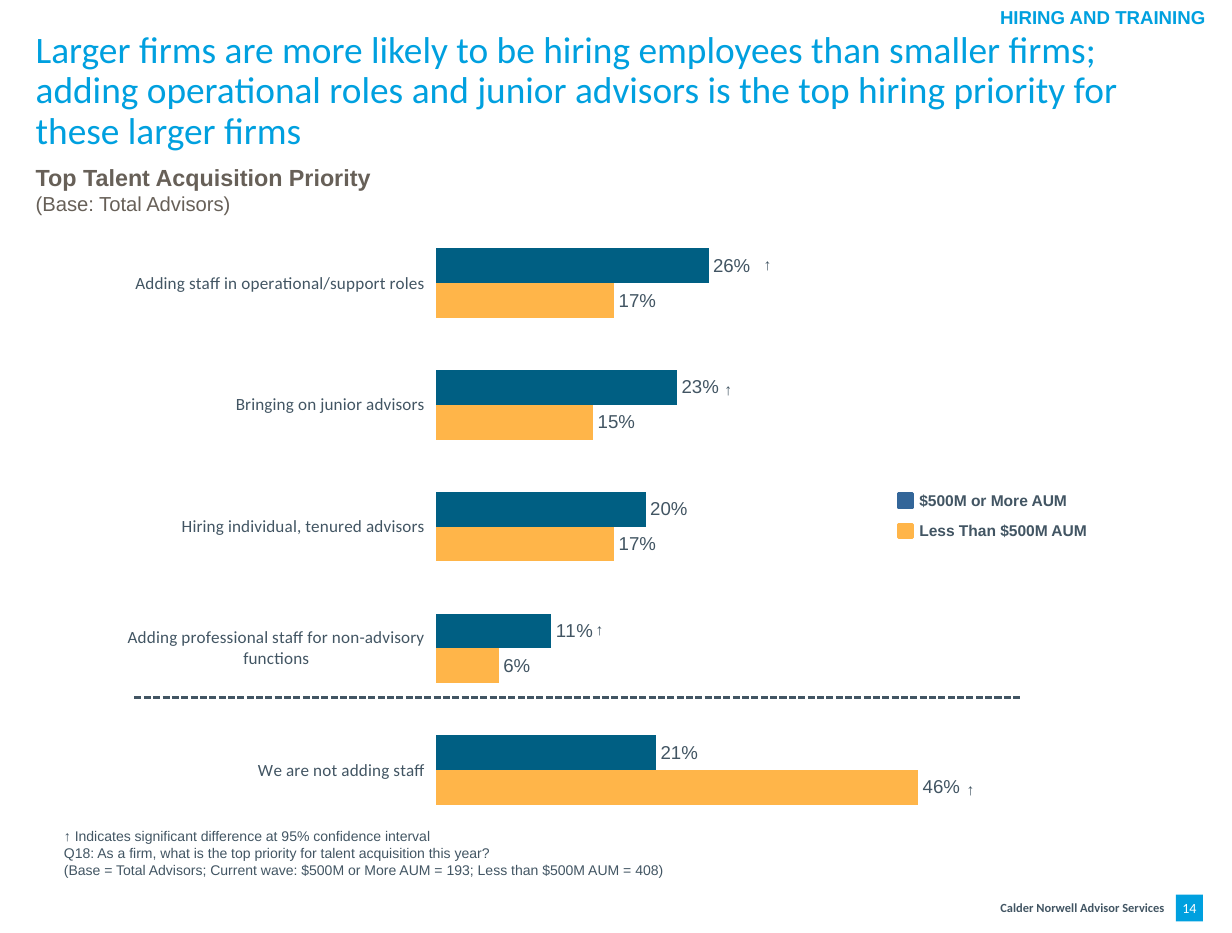
from dataclasses import dataclass

from lxml import etree
from pptx import Presentation
from pptx import util as u
from pptx.chart.data import CategoryChartData
from pptx.dml.color import RGBColor
from pptx.enum import chart as charts, dml, shapes, text
from pptx.oxml import parse_xml
from pptx.oxml.ns import nsdecls, qn


@dataclass(frozen=True)
class Theme:
    """Colours, fonts and type sizes of the slide."""
    slate: str = "425563"
    sky: str = "00A0DF"
    taupe: str = "676058"
    teal: str = "005F83"
    amber: str = "FFB549"
    blue: str = "336699"
    white: str = "FFFFFF"
    body: str = "Arial"
    display: str = "Calibri"
    title: float = 24
    subtitle: float = 15
    base: float = 13
    label: float = 12
    category: float = 11
    legend: float = 10
    note: float = 9
    footer: float = 8


THEME = Theme()
PADDING = (0.28, 0.15, 0.28, 0.15)


def assign(target, values):
    """Set every attribute named in values on target."""
    for name, value in values.items():
        setattr(target, name, value)


def style_font(font, size, color=THEME.slate, name=THEME.body, bold=False):
    """Give a font its size, colour, typeface and weight."""
    assign(font, {"size": u.Pt(size), "name": name, "bold": bold})
    font.color.rgb = RGBColor.from_string(color)


class SlideBuilder:
    """Draws styled elements on the current slide, measured in centimetres."""

    def __init__(self, presentation):
        """Start a blank slide."""
        self.slide = presentation.slides.add_slide(presentation.slide_layouts[6])

    def fill_text(self, shape, lines, style, layout=None, insets=(0, 0, 0, 0), frame=None):
        """Fill a shape with paragraphs, one for each (text, font changes) pair."""
        text_frame = shape.text_frame
        sides = ("margin_left", "margin_top", "margin_right", "margin_bottom")
        assign(text_frame, dict(zip(sides, map(u.Cm, insets))))
        assign(text_frame, {"word_wrap": True, **(frame or {})})
        for index, (line, changes) in enumerate(lines):
            paragraph = text_frame.add_paragraph() if index else text_frame.paragraphs[0]
            assign(paragraph, layout or {})
            run = paragraph.add_run()
            run.text = line
            style_font(run.font, **{**style, **changes})

    def text(self, box, lines, style, **options):
        """Add a text box."""
        shape = self.slide.shapes.add_textbox(*map(u.Cm, box))
        self.fill_text(shape, lines, style, **options)

    def rectangle(self, box, color, border=0):
        """Add a filled rectangle, with a border of the same colour if asked."""
        shape = self.slide.shapes.add_shape(shapes.MSO_SHAPE.RECTANGLE, *map(u.Cm, box))
        shape.shadow.inherit = False
        shape.fill.solid()
        shape.fill.fore_color.rgb = RGBColor.from_string(color)
        if border:
            shape.line.color.rgb = RGBColor.from_string(color)
            shape.line.width = u.Pt(border)
        else:
            shape.line.fill.background()
        return shape

    def dashed_line(self, left, right, top):
        """Add a horizontal dashed rule."""
        line = self.slide.shapes.add_connector(
            shapes.MSO_CONNECTOR.STRAIGHT, u.Cm(left), u.Cm(top), u.Cm(right), u.Cm(top))
        line.line.color.rgb = RGBColor.from_string(THEME.slate)
        assign(line.line, {"width": u.Pt(1.5), "dash_style": dml.MSO_LINE.SQUARE_DOT})
        etree.SubElement(line._element.spPr, qn("a:effectLst"))

    def bar_chart(self, box, categories, series, plot_area):
        """Add a clustered bar chart with percentage labels and a fixed plot area."""
        data = CategoryChartData(number_format="0%")
        data.categories = categories
        for name, values, _ in series:
            data.add_series(name, values)
        chart = self.slide.shapes.add_chart(
            charts.XL_CHART_TYPE.BAR_CLUSTERED, *map(u.Cm, box), data).chart
        assign(chart, {"has_legend": False, "has_title": False})
        style_font(chart.font, THEME.category, name=THEME.display)
        assign(chart.value_axis, {"visible": False, "has_major_gridlines": False,
                                  "minimum_scale": 0, "maximum_scale": 0.7})
        chart.category_axis.format.line.fill.background()
        style_font(chart.category_axis.tick_labels.font, THEME.category, name=THEME.display)
        plot = chart.plots[0]
        assign(plot, {"gap_width": 150, "overlap": 0, "vary_by_categories": False})
        for bars, (_, _, color) in zip(plot.series, series):
            bars.format.fill.solid()
            bars.format.fill.fore_color.rgb = RGBColor.from_string(color)
            labels = bars.data_labels
            assign(labels, {"show_value": True, "number_format": "0%",
                            "number_format_is_linked": False,
                            "position": charts.XL_LABEL_POSITION.OUTSIDE_END})
            style_font(labels.font, THEME.label)
        values = "".join(f'<c:{tag} val="{value}"/>' for tag, value in zip("xywh", plot_area))
        layout = parse_xml(
            f'<c:layout {nsdecls("c")}><c:manualLayout><c:layoutTarget val="inner"/>'
            f'<c:xMode val="edge"/><c:yMode val="edge"/>{values}</c:manualLayout></c:layout>')
        area = chart._chartSpace.chart.plotArea
        for old in area.findall(qn("c:layout")):
            area.remove(old)
        area.insert(0, layout)


def main():
    """Build the hiring priorities slide."""
    presentation = Presentation()
    assign(presentation, {"slide_width": u.Cm(27.94), "slide_height": u.Cm(21.16)})
    builder = SlideBuilder(presentation)
    center, right = text.PP_ALIGN.CENTER, text.PP_ALIGN.RIGHT
    tight = {"word_wrap": False, "vertical_anchor": text.MSO_ANCHOR.MIDDLE}

    builder.text((20.65, 20.29, 5.77, 0.61), [("Calder Norwell Advisor Services", {})],
                 {"size": THEME.footer, "name": THEME.display, "bold": True},
                 layout={"alignment": right, "line_spacing": 0.95}, frame=tight)
    page_box = builder.rectangle((26.67, 20.29, 0.61, 0.61), THEME.sky)
    builder.fill_text(page_box, [("14", {})],
                      {"size": THEME.note, "name": THEME.display, "color": THEME.white},
                      layout={"alignment": center}, frame=tight)

    builder.text((0.81, 0.71, 26.14, 2.77),
                 [("Larger firms are more likely to be hiring employees than smaller firms; "
                   "adding operational roles and junior advisors is the top hiring priority "
                   "for these larger firms", {})],
                 {"size": THEME.title, "name": THEME.display, "color": THEME.sky},
                 layout={"line_spacing": 0.9})
    builder.text((0.81, 3.71, 19.23, 1.37),
                 [("Top Talent Acquisition Priority", {"bold": True}),
                  ("(Base: Total Advisors)", {"size": THEME.base})],
                 {"size": THEME.subtitle, "color": THEME.taupe}, insets=(0, 0, 0.28, 0.15))
    builder.text((1.17, 18.62, 24.46, 1.45),
                 [("↑ Indicates significant difference at 95% confidence interval", {}),
                  ("Q18: As a firm, what is the top priority for talent acquisition this year?", {}),
                  ("(Base = Total Advisors; Current wave: $500M or More AUM = 193; "
                   "Less than $500M AUM = 408)", {})],
                 {"size": THEME.note}, insets=PADDING)

    builder.bar_chart(
        (1.8, 4.65, 26.01, 14.58),
        ["We are not adding staff", "Adding professional staff for non-advisory functions",
         "Hiring individual, tenured advisors", "Bringing on junior advisors",
         "Adding staff in operational/support roles"],
        [("Less Than $500M AUM", (0.46, 0.06, 0.17, 0.15, 0.17), THEME.amber),
         ("$500M or More AUM", (0.21, 0.11, 0.20, 0.23, 0.26), THEME.teal)],
        (0.311, 0.027, 0.64, 0.947))
    for left, top in ((17.04, 5.64), (16.15, 8.46), (13.23, 13.92), (21.64, 17.53)):
        builder.text((left, top, 0.89, 0.71), [("↑", {})], {"size": THEME.legend},
                     insets=PADDING, frame={"word_wrap": False})
    builder.dashed_line(3.05, 23.16, 15.82)

    legend = (("$500M or More AUM", THEME.blue), ("Less Than $500M AUM", THEME.amber))
    for row, (name, color) in enumerate(legend):
        top = 11 + 0.69 * row
        builder.rectangle((20.37, top + 0.2, 0.33, 0.3), color, border=2)
        builder.text((20.6, top, 4.37, 0.76), [(name, {})],
                     {"size": THEME.legend, "bold": True},
                     layout={"space_before": u.Pt(8)}, insets=(0.25, 0.13, 0.25, 0.13))
    builder.text((22.43, 0, 5.23, 0.76), [("HIRING AND TRAINING", {})],
                 {"size": THEME.label, "color": THEME.sky, "bold": True},
                 layout={"space_before": u.Pt(4.4)}, insets=(0.25, 0.13, 0.25, 0.13),
                 frame={"word_wrap": False})
    presentation.save("out.pptx")


if __name__ == "__main__":
    main()
